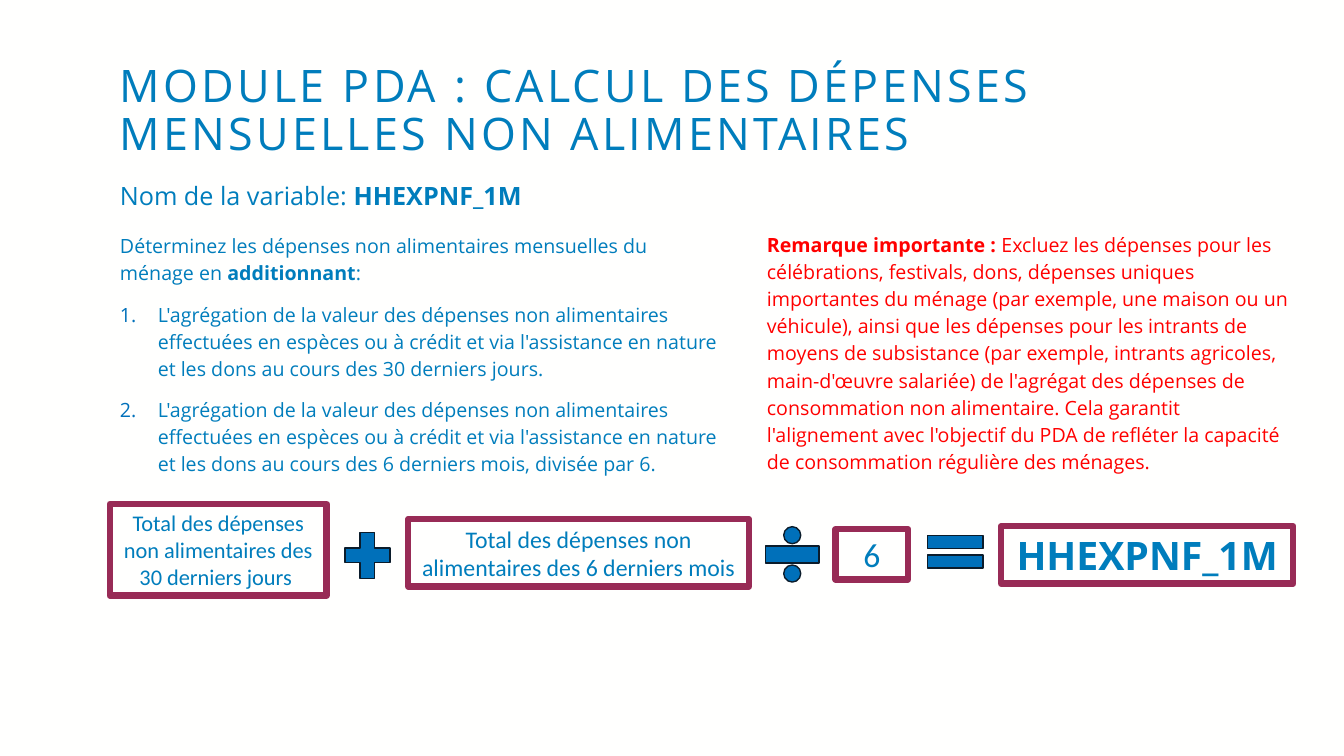
import pptx
import pptx.dml.color
import pptx.enum.shapes
import pptx.enum.text
import pptx.oxml.ns
import pptx.util
import lxml.etree

Pt = pptx.util.Pt
RGBColor = pptx.dml.color.RGBColor
MSO_SHAPE = pptx.enum.shapes.MSO_SHAPE
PP_ALIGN = pptx.enum.text.PP_ALIGN
MSO_ANCHOR = pptx.enum.text.MSO_ANCHOR
MSO_AUTO_SIZE = pptx.enum.text.MSO_AUTO_SIZE

BACKGROUND = RGBColor(0xFF, 0xFF, 0xFE)
TEXT_BLUE = RGBColor(0x00, 0x7D, 0xBC)
SIGN_BLUE = RGBColor(0x00, 0x70, 0xBA)
SIGN_EDGE = RGBColor(0x0B, 0x1C, 0x2B)
FRAME_PLUM = RGBColor(0x98, 0x2B, 0x56)
NOTE_RED = RGBColor(0xFF, 0x00, 0x00)

LEFT = 78.5
WIDTH = 830
AXIS = 396
STEP = (
    "L'agrégation de la valeur des dépenses non alimentaires effectuées en espèces "
    "ou à crédit et via l'assistance en nature et les dons au cours des "
)
NOTE = (
    "Excluez les dépenses pour les célébrations, festivals, dons, dépenses uniques "
    "importantes du ménage (par exemple, une maison ou un véhicule), ainsi que les "
    "dépenses pour les intrants de moyens de subsistance (par exemple, intrants "
    "agricoles, main-d'œuvre salariée) de l'agrégat des dépenses de consommation non "
    "alimentaire. Cela garantit l'alignement avec l'objectif du PDA de refléter la "
    "capacité de consommation régulière des ménages."
)


def place(shape, box):
    """Move a shape to a box of left, top, width and height in points."""
    shape.left, shape.top, shape.width, shape.height = (Pt(length) for length in box)


def add_run(paragraph, text, size, color=TEXT_BLUE, bold=False, font="Open Sans"):
    """Append one formatted run to a paragraph."""
    run = paragraph.add_run()
    run.text = text
    run.font.name = font
    run.font.size = Pt(size)
    run.font.bold = bold
    run.font.color.rgb = color
    return run


def set_list_style(paragraph, numbered):
    """Number a paragraph with a hanging indent, or remove its bullet."""
    properties = paragraph._p.get_or_add_pPr()
    indent = Pt(27) if numbered else 0
    properties.set("marL", str(indent))
    properties.set("indent", str(-indent))
    if numbered:
        bullet_color = lxml.etree.SubElement(properties, pptx.oxml.ns.qn("a:buClr"))
        lxml.etree.SubElement(bullet_color, pptx.oxml.ns.qn("a:srgbClr"), val=str(SIGN_BLUE))
        lxml.etree.SubElement(
            properties, pptx.oxml.ns.qn("a:buFont"), typeface="+mj-lt")
        lxml.etree.SubElement(
            properties, pptx.oxml.ns.qn("a:buAutoNum"), type="arabicPeriod")
    else:
        lxml.etree.SubElement(properties, pptx.oxml.ns.qn("a:buNone"))


def fill_prose(shape, box, paragraphs, size, color=TEXT_BLUE):
    """Fill a text shape with (numbered, runs) paragraphs of (text, bold) runs."""
    place(shape, box)
    frame = shape.text_frame
    frame.word_wrap = True
    frame.auto_size = MSO_AUTO_SIZE.NONE
    for index, (numbered, runs) in enumerate(paragraphs):
        paragraph = frame.add_paragraph() if index else frame.paragraphs[0]
        set_list_style(paragraph, numbered)
        paragraph.line_spacing = 1.15
        paragraph.space_before = Pt(0)
        paragraph.space_after = Pt(10)
        for text, bold in runs:
            add_run(paragraph, text, size, color, bold)


def fill_title(shape, box):
    """Write the slide title into its placeholder."""
    place(shape, box)
    frame = shape.text_frame
    frame.word_wrap = True
    frame.auto_size = MSO_AUTO_SIZE.NONE
    frame.vertical_anchor = MSO_ANCHOR.MIDDLE
    paragraph = frame.paragraphs[0]
    paragraph.alignment = PP_ALIGN.LEFT
    paragraph.line_spacing = 0.9
    title = "MODULE PDA : CALCUL DES DÉPENSES MENSUELLES NON ALIMENTAIRES"
    run = add_run(paragraph, title, 32)
    run.font._element.set("spc", "230")


def add_term(slide, box, text, size, font="Calibri", bold=False):
    """Add a framed term of the formula."""
    shape = slide.shapes.add_shape(MSO_SHAPE.RECTANGLE, 0, 0, 0, 0)
    place(shape, box)
    shape.shadow.inherit = False
    shape.fill.background()
    shape.line.color.rgb = FRAME_PLUM
    shape.line.width = Pt(4.5)
    lxml.etree.SubElement(shape.line._get_or_add_ln(), pptx.oxml.ns.qn("a:round"))
    frame = shape.text_frame
    frame.word_wrap = True
    frame.vertical_anchor = MSO_ANCHOR.MIDDLE
    paragraph = frame.paragraphs[0]
    paragraph.alignment = PP_ALIGN.CENTER
    add_run(paragraph, text, size, TEXT_BLUE, bold, font)


def add_sign(slide, box, kind):
    """Add an arithmetic sign of the formula."""
    shape = slide.shapes.add_shape(kind, 0, 0, 0, 0)
    place(shape, box)
    shape.shadow.inherit = False
    shape.fill.solid()
    shape.fill.fore_color.rgb = SIGN_BLUE
    shape.line.color.rgb = SIGN_EDGE
    shape.line.width = Pt(1)


def add_formula(slide, left, axis):
    """Lay out the formula from a left edge, each part centred near the axis."""
    terms = [
        (0, -3.3, 154.8, 65.5, "Total des dépenses non alimentaires des 30 derniers jours ", 16),
        (213.1, -1.1, 243.4, 48.2, "Total des dépenses non alimentaires des 6 derniers mois", 17),
        (518.4, 0, 51.8, 36, "6", 24),
        (636.5, 0.4, 208.8, 41, "HHEXPNF_1M", 28, "Open Sans", True),
    ]
    signs = [
        (162, 0.7, 43.9, 44.6, MSO_SHAPE.MATH_PLUS),
        (461.5, 0, 51.8, 51.8, MSO_SHAPE.MATH_DIVIDE),
        (576.7, -1.8, 54, 39.6, MSO_SHAPE.MATH_EQUAL),
    ]
    for add_part, parts in ((add_term, terms), (add_sign, signs)):
        for offset, shift, width, height, *content in parts:
            box = (left + offset, axis + shift - height / 2, width, height)
            add_part(slide, box, *content)


def build_slide(presentation):
    """Build the slide on monthly non-food expenditure."""
    slide = presentation.slides.add_slide(presentation.slide_layouts[1])
    slide.background.fill.solid()
    slide.background.fill.fore_color.rgb = BACKGROUND
    fill_title(slide.shapes.title, (LEFT, 34.6, WIDTH, 90.7))
    steps = [
        (False, [
            ("Déterminez les dépenses non alimentaires mensuelles du ménage en ", False),
            ("additionnant", True),
            (":", False),
        ]),
        (True, [(STEP + "30 derniers jours.", False)]),
        (True, [(STEP + "6 derniers mois, divisée par 6.", False)]),
    ]
    fill_prose(slide.placeholders[1], (LEFT, 161.3, 447.1, 177.8), steps, 14)
    variable = [(False, [("Nom de la variable: ", False), ("HHEXPNF_1M", True)])]
    variable_box = slide.shapes.add_textbox(0, 0, 0, 0)
    fill_prose(variable_box, (LEFT, 121.7, WIDTH, 322.6), variable, 18)
    add_formula(slide, LEFT, AXIS)
    note = [(False, [("Remarque importante : ", True), (NOTE, False)])]
    note_box = slide.shapes.add_textbox(0, 0, 0, 0)
    fill_prose(note_box, (540.7, 160.6, 388.1, 122.4), note, 14, NOTE_RED)


def main():
    """Create and save the presentation."""
    presentation = pptx.Presentation()
    presentation.slide_width = Pt(960)
    presentation.slide_height = Pt(540)
    build_slide(presentation)
    presentation.save("out.pptx")


if __name__ == "__main__":
    main()
